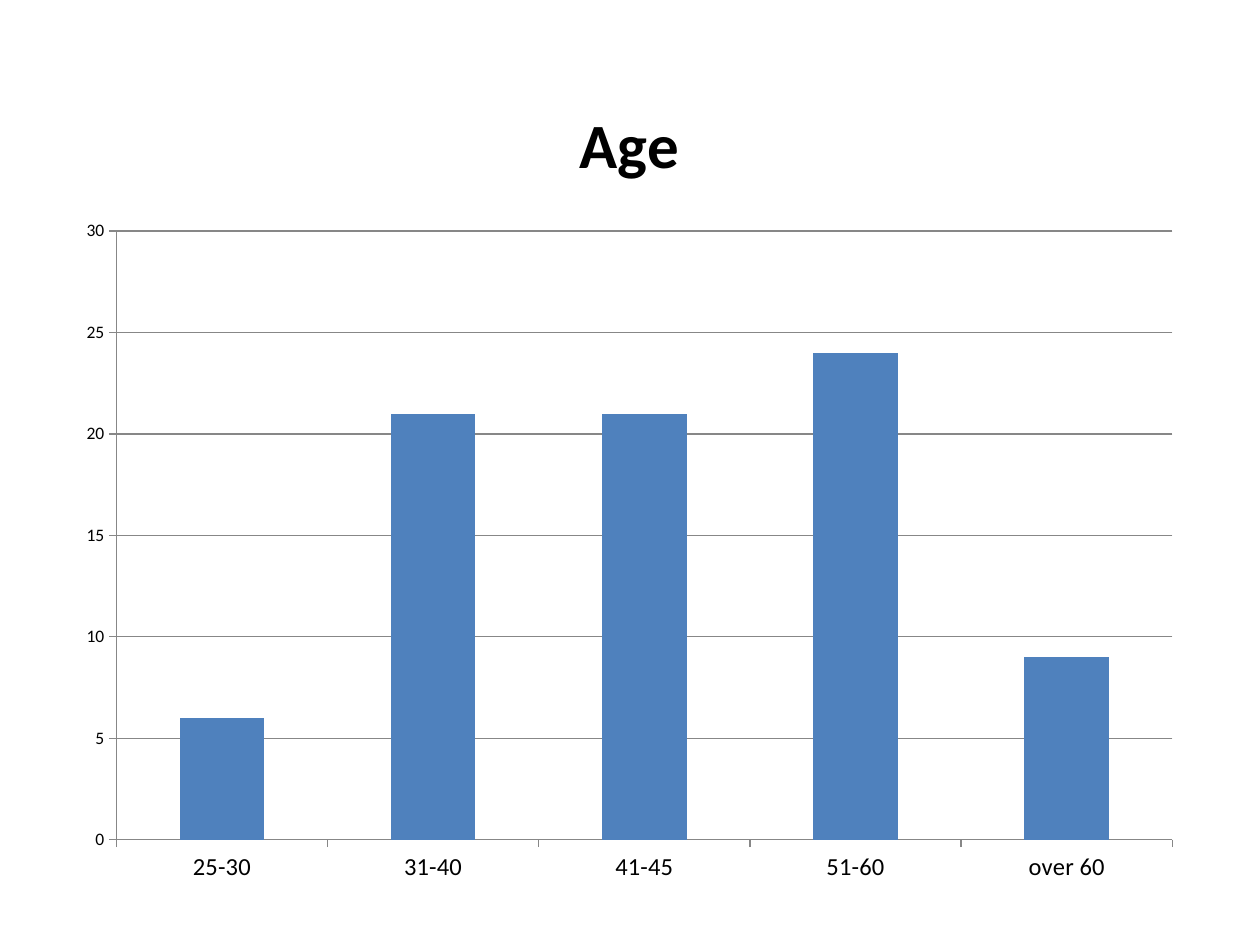
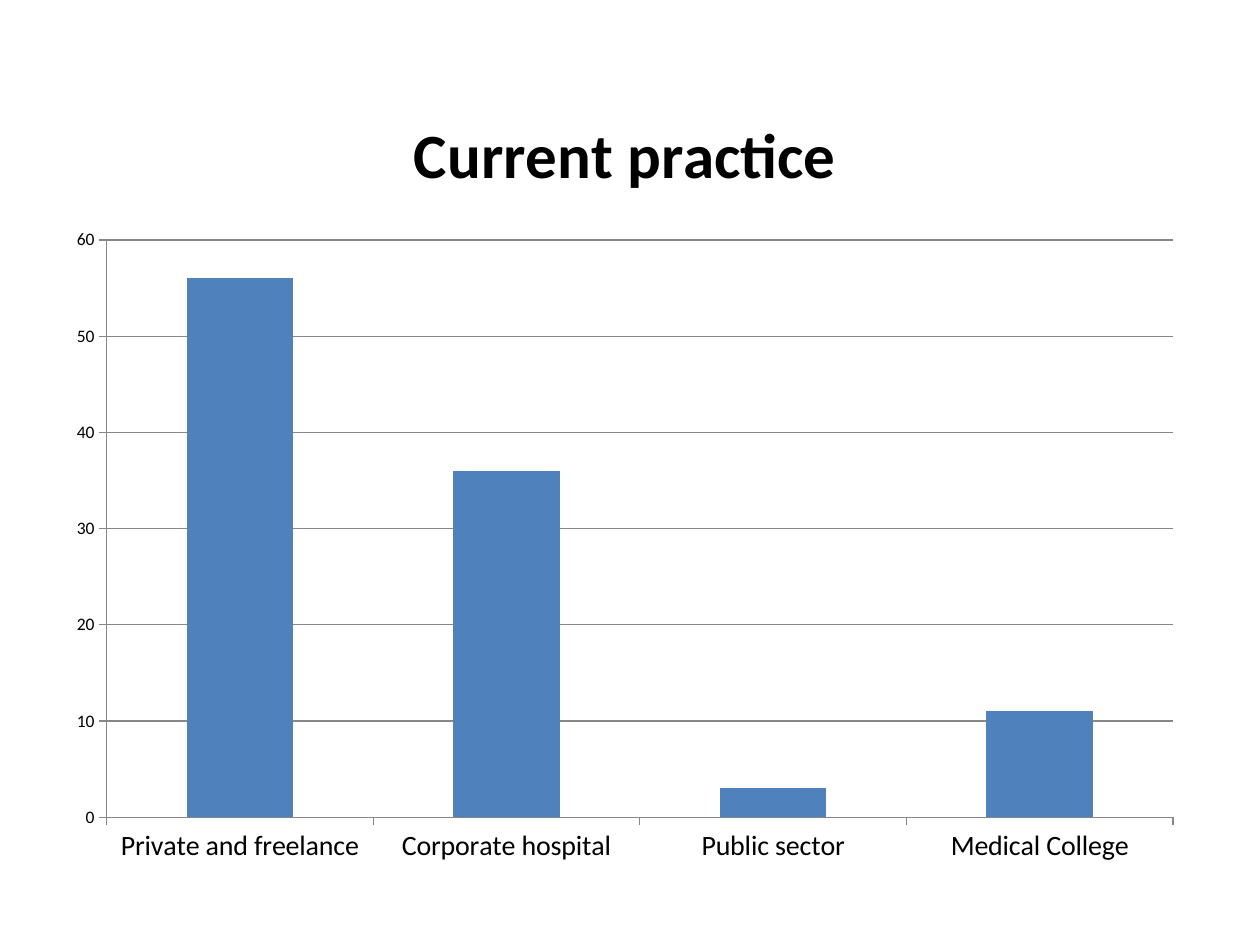
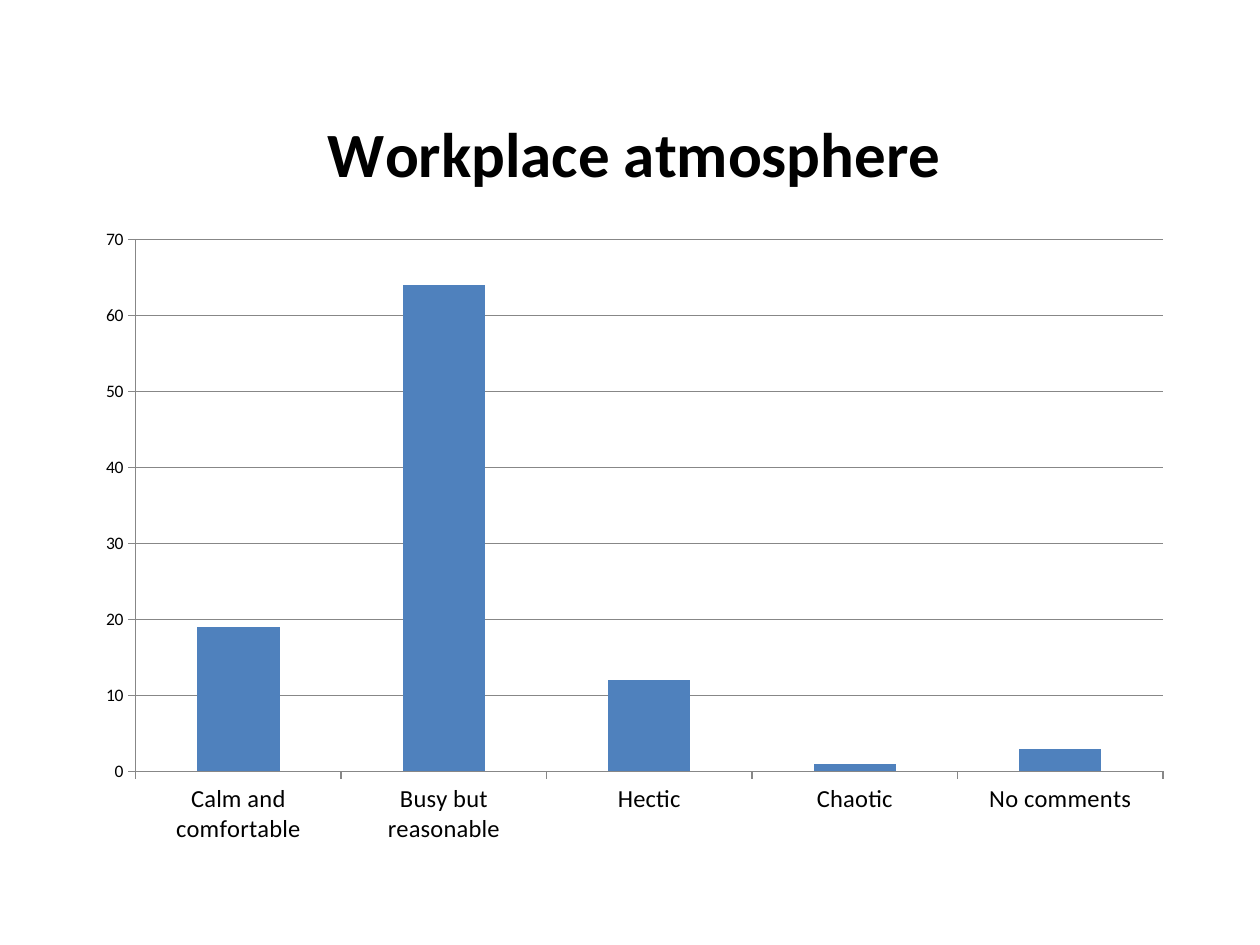
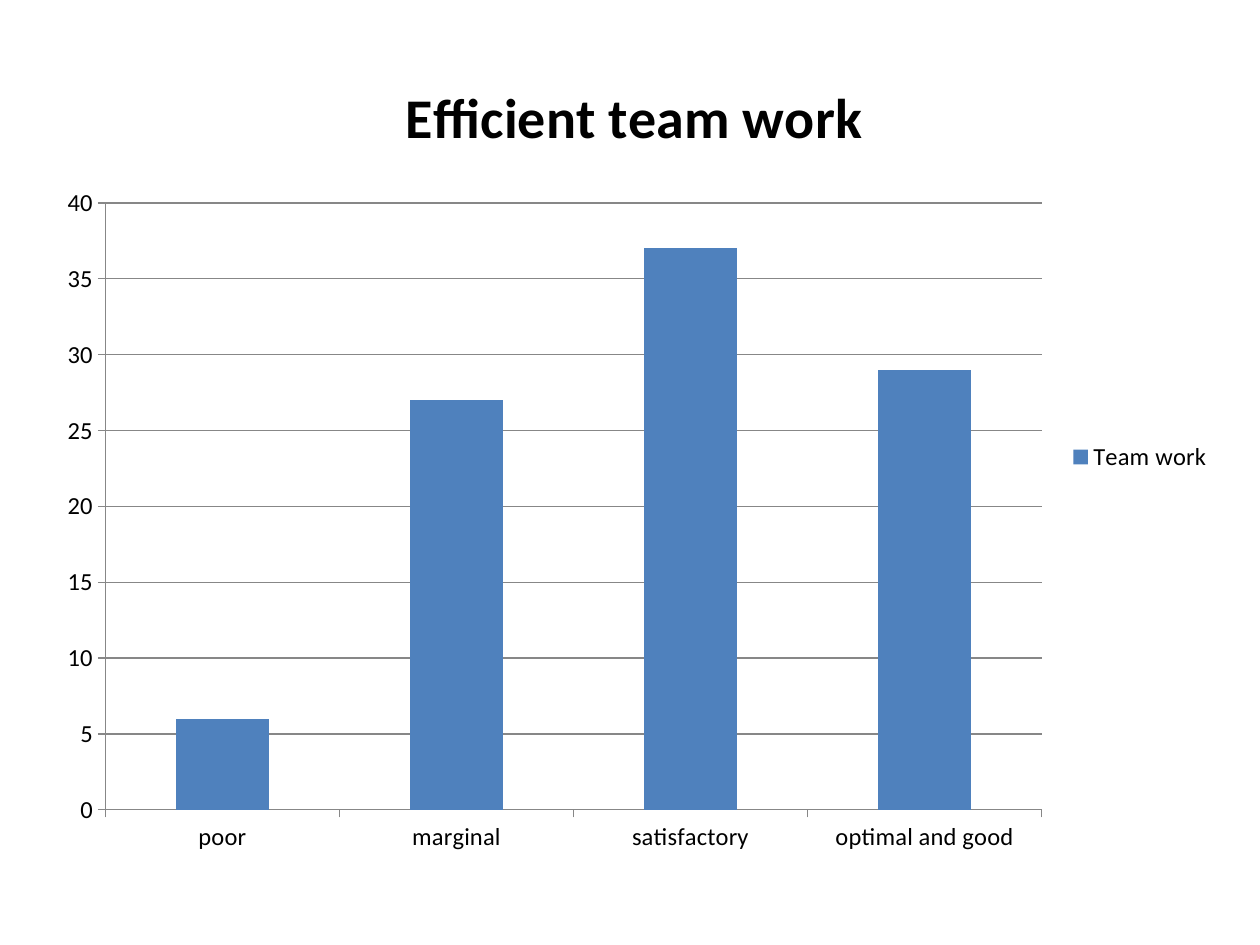
from pptx import Presentation
from pptx import util as u
from pptx.chart.data import CategoryChartData
from pptx.dml.color import RGBColor
from pptx.enum import chart as ch

PX = 914400 / 126  # EMU in one px
FACE = "Calibri"
BLACK = RGBColor(0, 0, 0)
BLUE = RGBColor(0x4F, 0x81, 0xBD)
GREY = RGBColor(0x87, 0x87, 0x87)


def px(*vals):
    return [u.Emu(round(v * PX)) for v in vals]


def write(frame, words, size=36, bold=True, color=BLACK):
    run = frame.paragraphs[0].add_run()
    run.text = words
    font = run.font
    font.name, font.size, font.bold = FACE, u.Pt(size), bold
    font.color.rgb = color


# One survey question per slide:
# title, title size, series, box, label size, category size, top, step, legend, answers
polls = [
    ("Age", 36, "Age", (64, 66, 1131, 833), 10, 14, 30, 5, False,
     {"25-30": 6, "31-40": 21, "41-45": 21, "51-60": 24, "over 60": 9}),
    ("Current practice", 36, "Current practice", (54, 76, 1142, 804), 10, 16, 60, 10, False,
     {"Private and freelance": 56, "Corporate hospital": 36,
      "Public sector": 3, "Medical College": 11}),
    ("Workplace atmosphere", 36, "Workplace atmosphere", (84, 76, 1101, 784), 10, 14, 70, 10, False,
     {"Calm and comfortable": 19, "Busy but reasonable": 64,
      "Hectic": 12, "Chaotic": 1, "No comments": 3}),
    ("Efficient team work", 32, "Team work", (44, 45, 1181, 824), 14, 14, 40, 5, True,
     {"poor": 6, "marginal": 27, "satisfactory": 37, "optimal and good": 29}),
]

deck = Presentation()
deck.slide_width, deck.slide_height = px(1260, 945)

for title, big, name, box, small, mid, top, step, key, votes in polls:
    slide = deck.slides.add_slide(deck.slide_layouts[6])

    # Column chart
    data = CategoryChartData()
    data.categories = list(votes)
    data.add_series(name, list(votes.values()))
    chart = slide.shapes.add_chart(ch.XL_CHART_TYPE.COLUMN_CLUSTERED, *px(*box), data).chart
    chart.font.name, chart.font.size = FACE, u.Pt(small)
    chart.font.color.rgb = BLACK
    write(chart.chart_title.text_frame, title, size=big)

    # Bars
    plot = chart.plots[0]
    plot.vary_by_categories = False
    plot.gap_width = 150
    fill = plot.series[0].format.fill
    fill.solid()
    fill.fore_color.rgb = BLUE

    # Axes and grid
    cat, val = chart.category_axis, chart.value_axis
    val.minimum_scale, val.maximum_scale, val.major_unit = 0, top, step
    val.has_major_gridlines = True
    for axis, size in (cat, mid), (val, small):
        axis.major_tick_mark = ch.XL_TICK_MARK.OUTSIDE
        axis.tick_labels.font.size = u.Pt(size)
    for part in cat, val, val.major_gridlines:
        part.format.line.color.rgb = GREY
        part.format.line.width = u.Pt(0.75)

    # Legend
    chart.has_legend = key
    if key:
        chart.legend.position = ch.XL_LEGEND_POSITION.RIGHT
        chart.legend.include_in_layout = False

deck.save("out.pptx")
